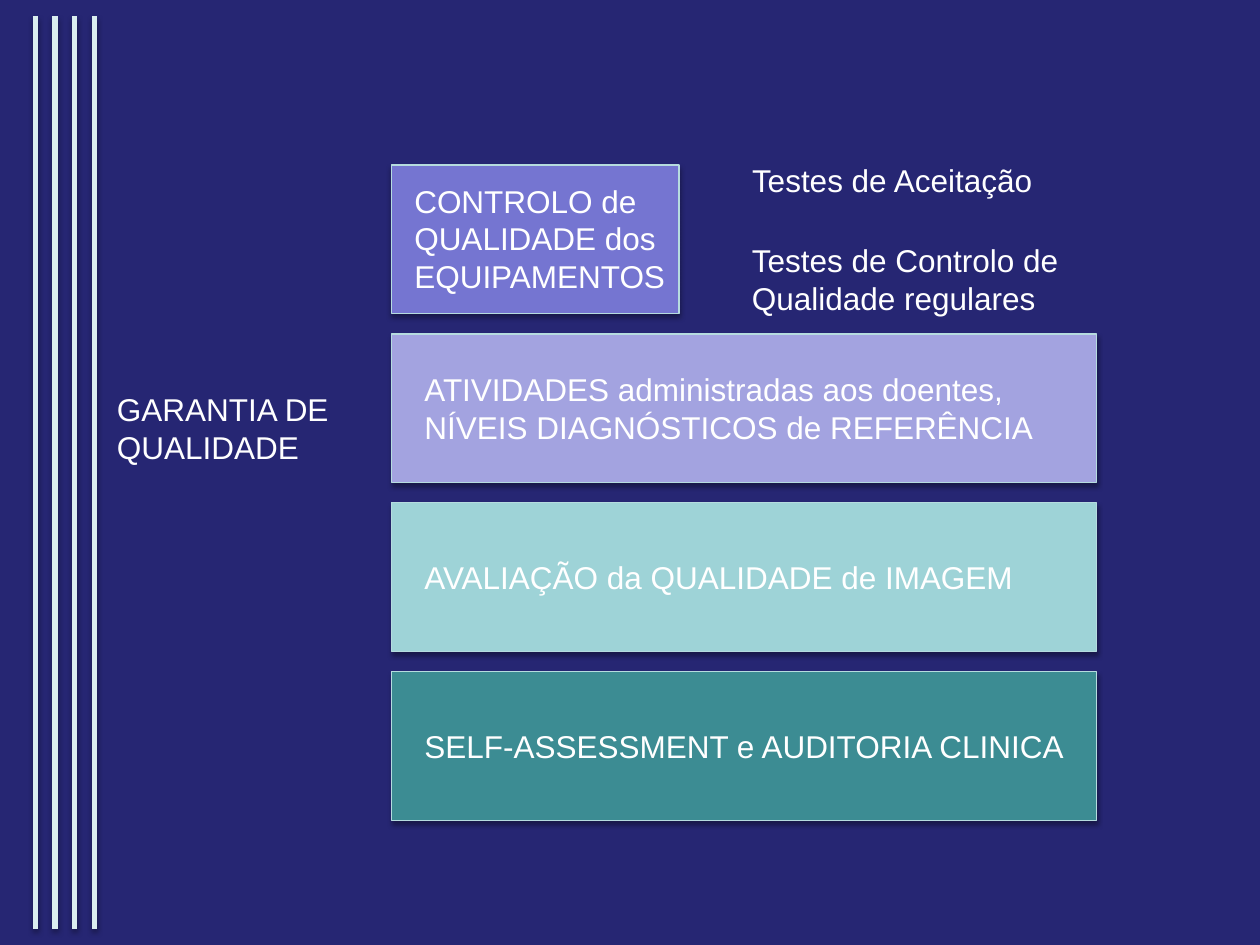
from pptx import Presentation
from pptx.dml.color import RGBColor
from pptx.enum.shapes import MSO_CONNECTOR, MSO_SHAPE
from pptx.enum.text import MSO_ANCHOR, PP_ALIGN
from pptx.oxml import parse_xml
from pptx.oxml.ns import nsdecls
from pptx.util import Inches, Pt

NAVY = RGBColor(0x26, 0x26, 0x73)
WHITE = RGBColor(0xFF, 0xFF, 0xFF)
STRIPE = RGBColor(0xDA, 0xED, 0xEF)
BORDER = RGBColor(0xB6, 0xDC, 0xDF)
VIOLET = RGBColor(0x75, 0x75, 0xD1)
LILAC = RGBColor(0xA3, 0xA3, 0xE0)
AQUA = RGBColor(0x9E, 0xD3, 0xD7)
TEAL = RGBColor(0x3C, 0x8C, 0x93)

LEFT, TOP = 3.11, 1.31
WIDE, NARROW, HEIGHT = 5.59, 2.28, 1.18
GAP = 0.16
LINE_HEIGHT, PADDING = 0.305, 0.1


def add_shadow(s):
    """Cast a soft shadow straight down; call after the line is formatted."""
    s._element.spPr.append(parse_xml(
        f'<a:effectLst {nsdecls("a")}>'
        f'<a:outerShdw blurRad="{Pt(3.1)}" dist="{Pt(1.8)}" dir="5400000" rotWithShape="0">'
        '<a:srgbClr val="000000"><a:alpha val="35000"/></a:srgbClr>'
        '</a:outerShdw></a:effectLst>'))


def add_label(left, middle, width, lines, rows=None, wrap=False):
    """Add a text box centred vertically on middle, one paragraph per line."""
    height = (rows or len(lines)) * LINE_HEIGHT + PADDING
    box = slide.shapes.add_textbox(
        Inches(left), Inches(middle - height / 2), Inches(width), Inches(height))
    tf = box.text_frame
    tf.word_wrap = wrap
    tf.vertical_anchor = MSO_ANCHOR.TOP
    for i, line in enumerate(lines):
        p = tf.paragraphs[0] if i == 0 else tf.add_paragraph()
        p.alignment = PP_ALIGN.LEFT
        r = p.add_run()
        r.text = line
        for name, value in {"name": "Arial", "size": Pt(18)}.items():
            setattr(r.font, name, value)
        r.font.color.rgb = WHITE


prs = Presentation()
prs.slide_width, prs.slide_height = Inches(10), Inches(7.5)
slide = prs.slides.add_slide(prs.slide_layouts[6])
slide.background.fill.solid()
slide.background.fill.fore_color.rgb = NAVY

# Vertical stripes
for i in range(4):
    x = Inches(0.28 + i * 0.157)
    stripe = slide.shapes.add_connector(
        MSO_CONNECTOR.STRAIGHT, x, Inches(0.13), x, Inches(7.37))
    stripe.line.color.rgb = STRIPE
    stripe.line.width = Pt(3)
    add_shadow(stripe)

# Stack of quality components: colour, box width, text left, text width, lines
components = [
    (VIOLET, NARROW, 3.19, 2.23, ["CONTROLO de QUALIDADE dos EQUIPAMENTOS"]),
    (LILAC, WIDE, 3.27, 5.1, ["ATIVIDADES administradas aos doentes,",
                              "NÍVEIS DIAGNÓSTICOS de REFERÊNCIA"]),
    (AQUA, WIDE, 3.27, 4.93, ["AVALIAÇÃO da QUALIDADE de IMAGEM"]),
    (TEAL, WIDE, 3.27, 5.32, ["SELF-ASSESSMENT e AUDITORIA CLINICA"]),
]
for i, (color, width, text_left, text_width, lines) in enumerate(components):
    top = TOP + i * (HEIGHT + GAP)
    s = slide.shapes.add_shape(
        MSO_SHAPE.RECTANGLE, Inches(LEFT), Inches(top), Inches(width), Inches(HEIGHT))
    s.fill.solid()
    s.fill.fore_color.rgb = color
    s.line.color.rgb = BORDER
    s.line.width = Pt(0.75)
    add_shadow(s)
    wraps = width == NARROW
    add_label(text_left, top + HEIGHT / 2, text_width, lines,
              rows=3 if wraps else None, wrap=wraps)

# Heading and equipment tests
add_label(0.83, 3.4, 1.9, ["GARANTIA DE", "QUALIDADE"])
add_label(5.87, 1.43, 2.45, ["Testes de Aceitação"])
add_label(5.87, 2.22, 2.66, ["Testes de Controlo de", "Qualidade regulares"])

prs.save("out.pptx")
